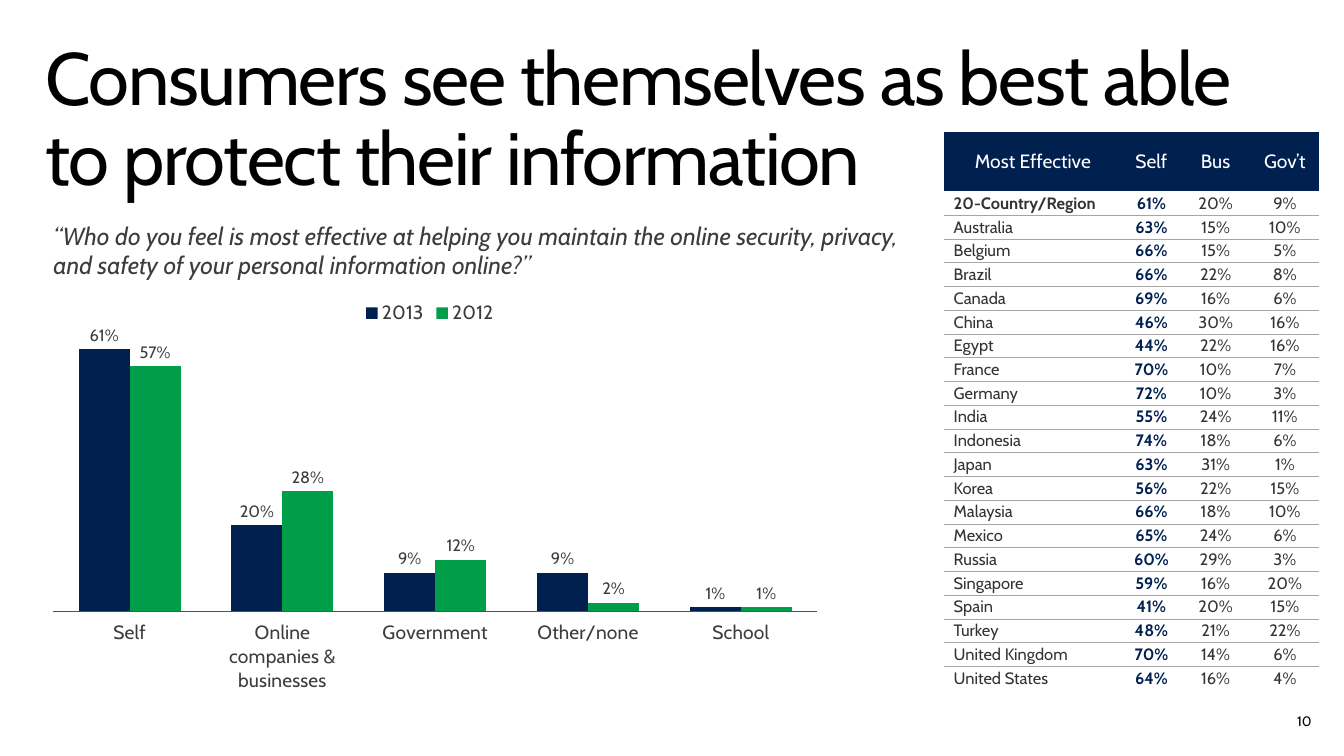
from lxml import etree
from pptx import Presentation
from pptx.chart.data import CategoryChartData
from pptx.dml.color import RGBColor
from pptx.enum.chart import XL_CHART_TYPE, XL_LABEL_POSITION, XL_LEGEND_POSITION, XL_TICK_LABEL_POSITION, XL_TICK_MARK
from pptx.enum.text import MSO_ANCHOR, PP_ALIGN
from pptx.oxml import parse_xml
from pptx.oxml.ns import nsdecls, qn
from pptx.util import Cm, Pt

COLUMN = XL_CHART_TYPE.COLUMN_CLUSTERED
OUTSIDE = XL_LABEL_POSITION.OUTSIDE_END
TOP_LEGEND = XL_LEGEND_POSITION.TOP
LOW = XL_TICK_LABEL_POSITION.LOW
NO_TICK = XL_TICK_MARK.NONE
TOP, MIDDLE = MSO_ANCHOR.TOP, MSO_ANCHOR.MIDDLE
LEFT, CENTER, RIGHT = PP_ALIGN.LEFT, PP_ALIGN.CENTER, PP_ALIGN.RIGHT

FONT = "Cabin"
PLAIN_STYLE = "{2D5ABB26-0587-4C30-8999-92F81FD0307C}"
COLORS = {
    "navy": "002050", "green": "009E49", "black": "000000", "white": "FFFFFF",
    "text": "3C3C3C", "cell": "333333", "rule": "A6A6A6", "axis": "505050",
}

TITLE = "Consumers see themselves as best able to protect their information"
QUOTE = ("“Who do you feel is most effective at helping you maintain the online "
         "security, privacy, and safety of your personal information online?”")
GROUPS = ["Self", "Online companies & businesses", "Government", "Other/none", "School"]
YEARS = [
    ("2013", "navy", [0.61, 0.2, 0.09, 0.09, 0.01]),
    ("2012", "green", [0.57, 0.28, 0.12, 0.02, 0.01]),
]
HEADS = ["Most Effective", "Self", "Bus", "Gov’t"]
SHARES = [
    ("20-Country/Region", 61, 20, 9),
    ("Australia", 63, 15, 10),
    ("Belgium", 66, 15, 5),
    ("Brazil", 66, 22, 8),
    ("Canada", 69, 16, 6),
    ("China", 46, 30, 16),
    ("Egypt", 44, 22, 16),
    ("France", 70, 10, 7),
    ("Germany", 72, 10, 3),
    ("India", 55, 24, 11),
    ("Indonesia", 74, 18, 6),
    ("Japan", 63, 31, 1),
    ("Korea", 56, 22, 15),
    ("Malaysia", 66, 18, 10),
    ("Mexico", 65, 24, 6),
    ("Russia", 60, 29, 3),
    ("Singapore", 59, 16, 20),
    ("Spain", 41, 20, 15),
    ("Turkey", 48, 21, 22),
    ("United Kingdom", 70, 14, 6),
    ("United States", 64, 16, 4),
]


def color(name):
    return RGBColor.from_string(COLORS[name])


def style(font, size, tint, bold=False, italic=False):
    font.name, font.size = FONT, Pt(size)
    font.bold, font.italic = bold, italic
    font.color.rgb = color(tint)


def write(frame, text, size, tint, align=LEFT, bold=False, italic=False):
    frame.text = text
    para = frame.paragraphs[0]
    para.alignment = align
    style(para.runs[0].font, size, tint, bold, italic)
    return para


def add_title(slide):
    title = slide.shapes.title
    title.left, title.top, title.width, title.height = Cm(0.76), Cm(0.81), Cm(31.39), Cm(2.54)
    frame = title.text_frame
    frame.word_wrap, frame.vertical_anchor = True, TOP
    frame.margin_left = frame.margin_right = Cm(0.41)
    frame.margin_top = frame.margin_bottom = Cm(0.25)
    para = write(frame, TITLE, 54, "black")
    para.line_spacing = 0.9
    para.runs[0].font._element.set("spc", "-100")


def add_text(slide, box, text, size, tint, anchor=TOP, align=LEFT, italic=False):
    frame = slide.shapes.add_textbox(*map(Cm, box)).text_frame
    frame.word_wrap, frame.vertical_anchor = True, anchor
    write(frame, text, size, tint, align, italic=italic)


def add_rule(cell):
    line = parse_xml(
        f'<a:lnB {nsdecls("a")} w="3175"><a:solidFill>'
        f'<a:srgbClr val="{COLORS["rule"]}"/></a:solidFill></a:lnB>')
    cell._tc.get_or_add_tcPr().insert(0, line)


def fill_cell(cell, text, size, tint, back, align, bold=False):
    cell.margin_left = cell.margin_right = Cm(0.25)
    cell.margin_top = cell.margin_bottom = Cm(0.05)
    cell.vertical_anchor = MIDDLE
    cell.fill.solid()
    cell.fill.fore_color.rgb = color(back)
    write(cell.text_frame, text, size, tint, align, bold)


def add_shares(slide):
    count = len(SHARES)
    table = slide.shapes.add_table(
        count + 1, len(HEADS), Cm(24.26), Cm(3.4), Cm(9.65), Cm(14.33)).table
    table.first_row = table.horz_banding = False
    table._tbl.tblPr.find(qn("a:tableStyleId")).text = PLAIN_STYLE
    for col, width in zip(table.columns, [4.57, 1.52, 1.78, 1.78]):
        col.width = Cm(width)
    for num, row in enumerate(table.rows):
        row.height = Cm(0.61 if num else 1.52)

    # Header row
    for col, head in enumerate(HEADS):
        fill_cell(table.cell(0, col), head, 14, "white", "navy", CENTER)

    # Country rows
    for num, (place, *shares) in enumerate(SHARES, 1):
        texts = [place] + [f"{share}%" for share in shares]
        for col, text in enumerate(texts):
            cell = table.cell(num, col)
            fill_cell(cell, text, 12, "navy" if col == 1 else "cell", "white",
                      CENTER if col else LEFT, col == 1 or (num == 1 and col == 0))
            if num < count:
                add_rule(cell)


def set_layout(part, after, inner=False, **places):
    """Place a chart part by fractions of the chart's size."""
    for old in part.findall(qn("c:layout")):
        part.remove(old)
    layout = etree.Element(qn("c:layout"))
    manual = etree.SubElement(layout, qn("c:manualLayout"))
    values = {"layoutTarget": "inner"} if inner else {}
    values.update(xMode="edge", yMode="edge", **places)
    for tag, value in values.items():
        etree.SubElement(manual, qn("c:" + tag)).set("val", str(value))
    if after is None:
        part.insert(0, layout)
    else:
        after.addnext(layout)


def add_columns(slide):
    data = CategoryChartData(number_format="0%")
    data.categories = GROUPS
    for year, _, values in YEARS:
        data.add_series(year, values)
    chart = slide.shapes.add_chart(
        COLUMN, Cm(1.04), Cm(7.32), Cm(20.52), Cm(10.82), data).chart
    chart.has_title = False
    style(chart.font, 10, "text")

    # Columns and labels
    plot = chart.plots[0]
    plot.gap_width, plot.overlap, plot.vary_by_categories = 100, 0, False
    for series, (_, tint, _) in zip(plot.series, YEARS):
        series.format.fill.solid()
        series.format.fill.fore_color.rgb = color(tint)
        labels = series.data_labels
        labels.show_value, labels.position = True, OUTSIDE
        labels.number_format, labels.number_format_is_linked = "0%", False
        style(labels.font, 12, "text")

    # Axes
    axis = chart.category_axis
    axis.major_tick_mark = axis.minor_tick_mark = NO_TICK
    axis.tick_label_position = LOW
    axis.format.line.color.rgb = color("axis")
    axis.format.line.width = Pt(0.75)
    style(axis.tick_labels.font, 14, "text")
    scale = chart.value_axis
    scale.minimum_scale, scale.maximum_scale = 0, 0.7
    scale.has_major_gridlines = scale.visible = False

    # Legend and plot area
    chart.has_legend = True
    legend = chart.legend
    legend.position, legend.include_in_layout = TOP_LEGEND, False
    style(legend.font, 14, "text")
    root = legend._element
    set_layout(root, root.find(qn("c:legendPos")), x=0.4, y=0.03)
    set_layout(chart._chartSpace.chart.plotArea, None, True, x=0.016, y=0.061, w=0.957, h=0.715)


def main():
    deck = Presentation()
    deck.slide_width, deck.slide_height = Cm(34.54), Cm(19.43)
    slide = deck.slides.add_slide(deck.slide_layouts[5])
    add_title(slide)
    add_text(slide, (1.12, 5.54, 22.66, 1.8), QUOTE, 18, "text", italic=True)
    add_shares(slide)
    add_columns(slide)
    add_text(slide, (25.91, 18.01, 8.05, 1.04), "10", 10, "black", MIDDLE, RIGHT)
    deck.save("out.pptx")


if __name__ == "__main__":
    main()
